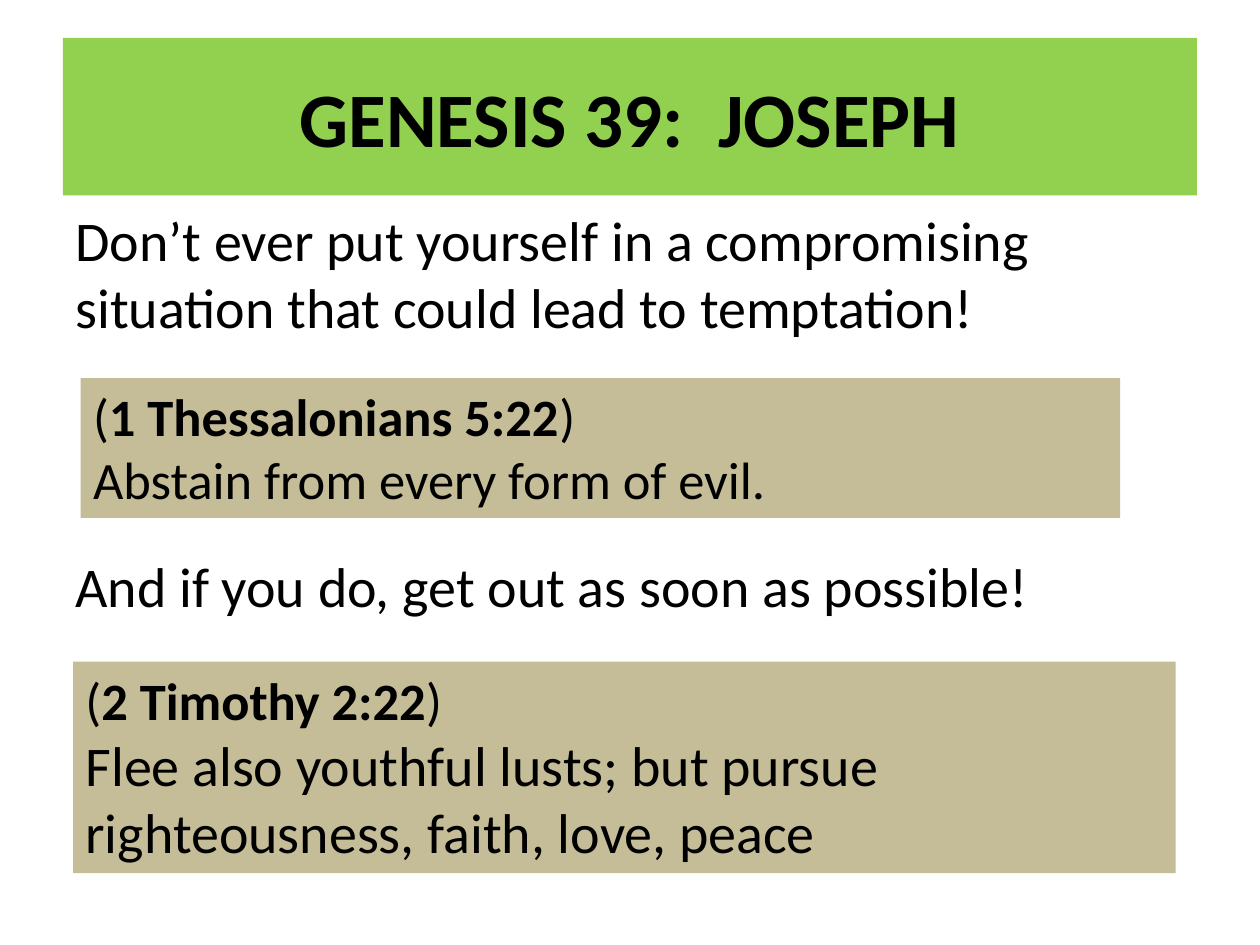
from pptx import Presentation
from pptx.dml.color import RGBColor
from pptx.enum.text import MSO_ANCHOR, PP_ALIGN
from pptx.util import Inches, Pt

FONT, BLACK, GREEN, TAN = "Calibri", "000000", "92D050", "C4BD97"
WIDTH, HEIGHT = 10, 7.5
MARGIN = 0.5
FULL = WIDTH - 2 * MARGIN

# Content: paragraphs are lists of (text, size, bold) runs
TITLE = [[("GENESIS 39:  JOSEPH", 44, True)]]
ADVICE = [[("Don’t ever put yourself in a compromising situation "
            "that could lead to temptation!", 32, False)]]
ESCAPE = [[("And if you do, get out as soon as possible!", 32, False)]]


def verse(reference, text, size):
    return [[("(", 30, False), (reference, 30, True), (")", 30, False)],
            [(text, size, False)]]


THESSALONIANS = verse("1 Thessalonians 5:22",
                      "Abstain from every form of evil.", 30)
TIMOTHY = verse("2 Timothy 2:22",
                "Flee also youthful lusts; but pursue righteousness, "
                "faith, love, peace", 32)

# Blocks from top to bottom: paragraphs, (left, top, width, height), format
BLOCKS = [
    (TITLE, (MARGIN, 0.3, FULL, 1.25),
     dict(fill=GREEN, align=PP_ALIGN.CENTER, anchor=MSO_ANCHOR.MIDDLE)),
    (ADVICE, (MARGIN, 1.58, FULL, 1.18), {}),
    (THESSALONIANS, (0.64, 3, 8.25, 1.11), dict(fill=TAN)),
    (ESCAPE, (MARGIN, 4.33, FULL, 0.64), {}),
    (TIMOTHY, (0.58, 5.25, 8.75, 1.68), dict(fill=TAN)),
]


def rgb(value):
    return RGBColor.from_string(value)


def add_text(s, paragraphs, box, fill=None, align=PP_ALIGN.LEFT,
             anchor=MSO_ANCHOR.TOP):
    sp = s.shapes.add_textbox(*map(Inches, box))
    if fill:
        sp.fill.solid()
        sp.fill.fore_color.rgb = rgb(fill)
    tf = sp.text_frame
    tf.word_wrap = True
    tf.vertical_anchor = anchor
    for i, runs in enumerate(paragraphs):
        p = tf.add_paragraph() if i else tf.paragraphs[0]
        p.alignment = align
        for text, size, bold in runs:
            r = p.add_run()
            r.text = text
            r.font.name = FONT
            r.font.size = Pt(size)
            r.font.bold = bold
            r.font.color.rgb = rgb(BLACK)


prs = Presentation()
prs.slide_width, prs.slide_height = Inches(WIDTH), Inches(HEIGHT)
s = prs.slides.add_slide(prs.slide_layouts[6])
for paragraphs, box, style in BLOCKS:
    add_text(s, paragraphs, box, **style)
prs.save("out.pptx")
